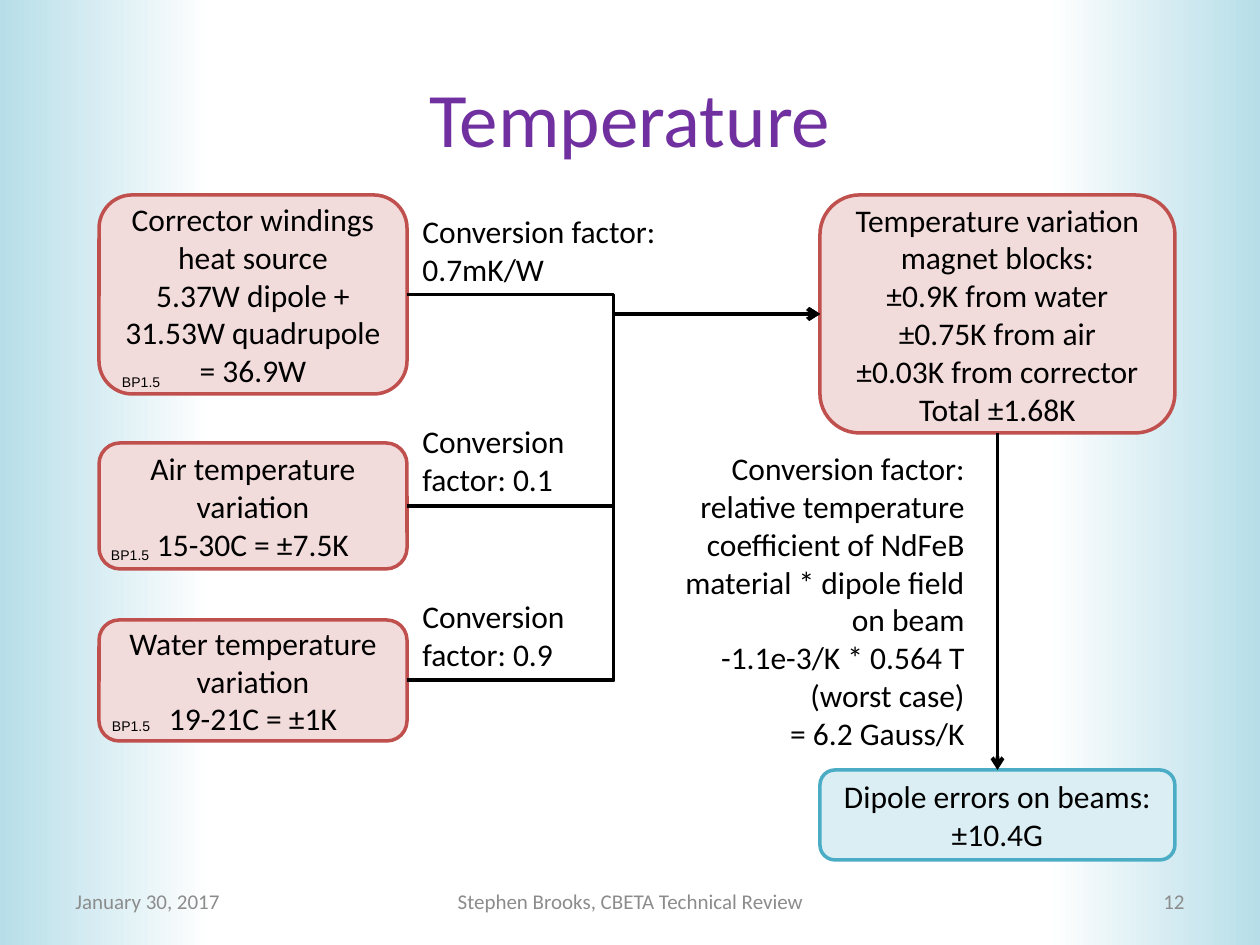
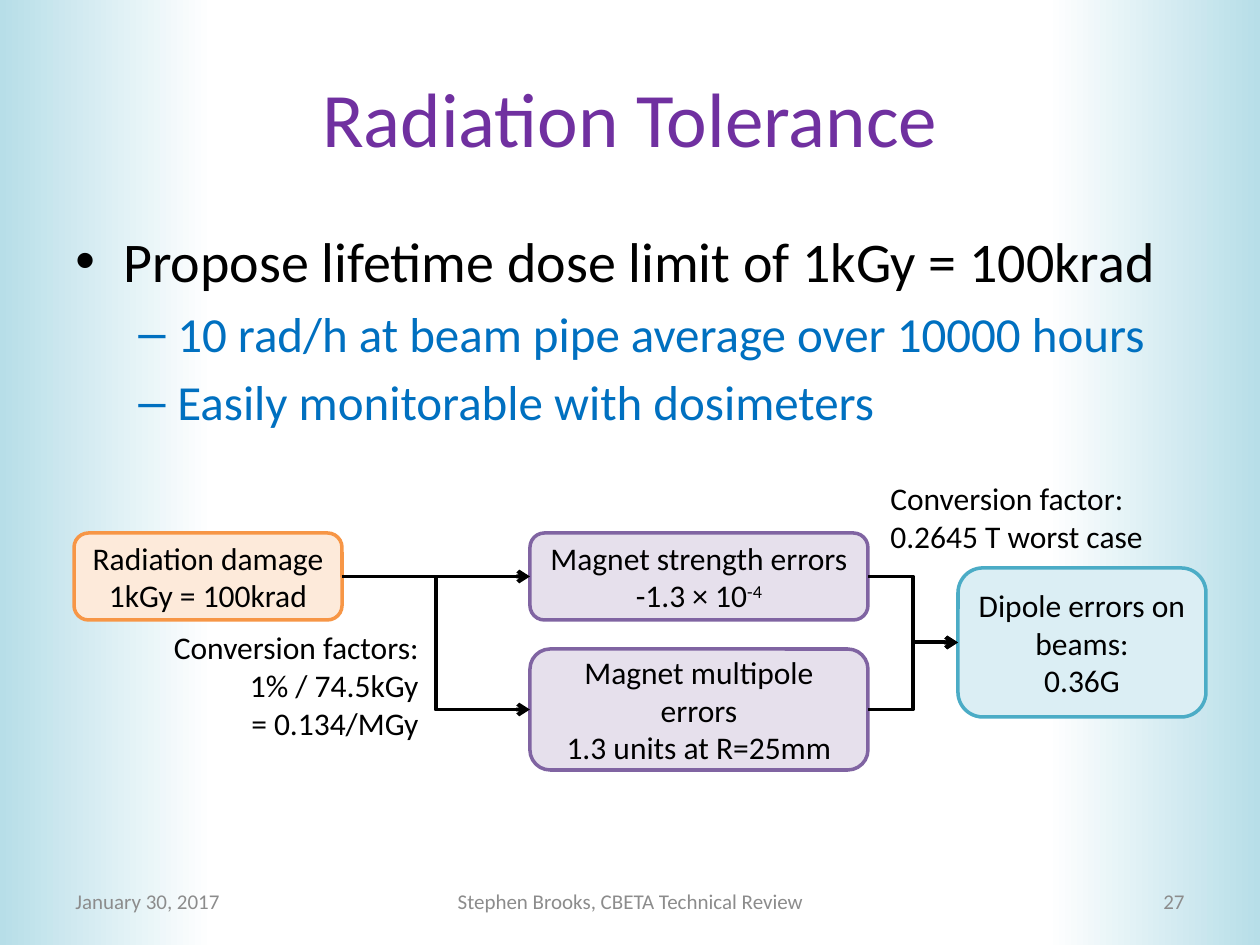
"""Builds two slides on magnet temperature and radiation tolerance."""
from lxml.etree import SubElement as sub
from pptx import Presentation
from pptx.dml.color import RGBColor as RGB
from pptx.enum.shapes import MSO_CONNECTOR as LINK, MSO_SHAPE as SHAPE
from pptx.enum.text import MSO_ANCHOR as ANCHOR, PP_ALIGN as ALIGN
from pptx.oxml.ns import qn
from pptx.util import Emu, Pt

WIDTH, HEIGHT = 1260, 945
SCALE = 914400 / 126
BLACK = RGB(0x00, 0x00, 0x00)
WHITE = RGB(0xFF, 0xFF, 0xFF)
GREY = RGB(0x8C, 0x8C, 0x8C)
PURPLE = RGB(0x70, 0x30, 0xA0)
BLUE = RGB(0x00, 0x70, 0xC0)
SKY = RGB(0xB7, 0xDE, 0xE8)
RED_BOX = RGB(0xF2, 0xDC, 0xDB), RGB(0xC0, 0x50, 0x4D)
TEAL_BOX = RGB(0xDB, 0xEE, 0xF4), RGB(0x4B, 0xAC, 0xC6)
PLUM_BOX = RGB(0xE6, 0xE0, 0xEC), RGB(0x80, 0x64, 0xA2)
GOLD_BOX = RGB(0xFD, 0xEA, 0xDA), RGB(0xF7, 0x96, 0x46)
TOP, LEFT, BOTTOM, RIGHT = range(4)


def px(*sizes):
    return [Emu(round(size * SCALE)) for size in sizes]


def write(frame, text, size=18, color=BLACK, font="Calibri", align=ALIGN.LEFT,
          anchor=ANCHOR.TOP, wrap=True, inset=None):
    """Fill a frame, one paragraph a line; text after ^ is raised."""
    frame.word_wrap = wrap
    frame.vertical_anchor = anchor
    if inset is not None:
        frame.margin_left, frame.margin_top, frame.margin_right, frame.margin_bottom = px(*[inset] * 4)
    for i, line in enumerate(text.split("\n")):
        para = frame.add_paragraph() if i else frame.paragraphs[0]
        para.alignment = align
        for j, part in enumerate(line.split("^")):
            run = para.add_run()
            run.text = part
            run.font.size = Pt(size)
            run.font.name = font
            run.font.color.rgb = color
            if j:
                run._r.get_or_add_rPr().set("baseline", "30000")


class Deck:
    """Holds the shared style and the current slide."""

    def __init__(self):
        self.prs = Presentation()
        self.prs.slide_width, self.prs.slide_height = px(WIDTH, HEIGHT)

    def start(self, title, number):
        slide = self.prs.slides.add_slide(self.prs.slide_layouts[5])
        self.shapes = slide.shapes
        self.band(0, 0)
        self.band(WIDTH - 213, 180)
        head = self.shapes.title
        head.left, head.top, head.width, head.height = px(63, 38, 1134, 158)
        write(head.text_frame, title, size=44, color=PURPLE,
              align=ALIGN.CENTER, anchor=ANCHOR.MIDDLE)
        for text, x, w, align in (
                ("January 30, 2017", 63, 294, ALIGN.LEFT),
                ("Stephen Brooks, CBETA Technical Review", 431, 399, ALIGN.CENTER),
                (str(number), 903, 294, ALIGN.RIGHT)):
            self.note(text, x, 876, w, 50, size=12, color=GREY,
                      align=align, anchor=ANCHOR.MIDDLE)

    def band(self, x, turn):
        band = self.shapes.add_shape(SHAPE.RECTANGLE, *px(x, 0, 213, HEIGHT))
        band.shadow.inherit = False
        band.line.fill.background()
        band.rotation = turn
        band.fill.gradient()
        band.fill.gradient_angle = 0
        for stop, color, place in zip(band.fill.gradient_stops, (SKY, WHITE), (0, 1)):
            stop.color.rgb = color
            stop.position = place
        self.shapes._spTree.insert(2, band._element)

    def note(self, text, x, y, w, h, **style):
        note = self.shapes.add_textbox(*px(x, y, w, h))
        write(note.text_frame, text, **style)
        return note

    def tag(self, x, y):
        self.note("BP1.5", x, y, 49, 26, size=8, font="Arial", wrap=False, inset=5)

    def box(self, text, x, y, w, h, paint):
        box = self.shapes.add_shape(SHAPE.ROUNDED_RECTANGLE, *px(x, y, w, h))
        box.shadow.inherit = False
        box.fill.solid()
        box.fill.fore_color.rgb, box.line.color.rgb = paint
        box.line.width = Pt(2)
        write(box.text_frame, text, align=ALIGN.CENTER, anchor=ANCHOR.MIDDLE)
        return box

    def link(self, start, end, out=RIGHT, into=LEFT, kind=LINK.ELBOW):
        link = self.shapes.add_connector(kind, 0, 0, 0, 0)
        link.begin_connect(start, out)
        link.end_connect(end, into)
        link.line.color.rgb = BLACK
        link.line.width = Pt(2.25)
        sub(link.line._get_or_add_ln(), qn("a:tailEnd"), type="arrow")
        sub(link._element.spPr, qn("a:effectLst"))

    def points(self, rows, x, y, w, h):
        looks = (("•", 48, -48, 32, BLACK), ("–", 102, -39, 28, BLUE))
        frame = self.note("\n".join(text for _, text in rows), x, y, w, h).text_frame
        for para, (level, _) in zip(frame.paragraphs, rows):
            mark, margin, indent, size, color = looks[level]
            para.level = level
            para.space_before = Pt(size * 0.2)
            font = para.runs[0].font
            font.size = Pt(size)
            font.color.rgb = color
            props = para._p.get_or_add_pPr()
            for key, value in zip(("marL", "indent"), px(margin, indent)):
                props.set(key, str(value))
            sub(props, qn("a:buFont"), typeface="Arial")
            sub(props, qn("a:buChar"), char=mark)


def heat(deck):
    deck.start("Temperature", 12)
    beam = deck.box("Dipole errors on beams:\n±10.4G", 820, 770, 355, 90, TEAL_BOX)
    block = deck.box("Temperature variation magnet blocks:\n±0.9K from water\n"
                     "±0.75K from air\n±0.03K from corrector\nTotal ±1.68K",
                     820, 195, 355, 238, RED_BOX)
    for text, y, h in (
            ("Corrector windings heat source\n5.37W dipole + 31.53W quadrupole\n= 36.9W", 195, 199),
            ("Air temperature variation\n15-30C = ±7.5K", 443, 126),
            ("Water temperature variation\n19-21C = ±1K", 620, 121)):
        deck.link(deck.box(text, 99, y, 308, h, RED_BOX), block)
    deck.link(block, beam, BOTTOM, TOP, LINK.STRAIGHT)
    deck.note("Conversion factor:\nrelative temperature coefficient of NdFeB material * "
              "dipole field on beam\n-1.1e-3/K * 0.564 T (worst case)\n= 6.2 Gauss/K",
              669, 443, 308, 317, align=ALIGN.RIGHT)
    deck.note("Conversion factor:\n0.7mK/W", 410, 206, 308, 89)
    deck.note("Conversion factor: 0.1", 410, 416, 178, 89)
    deck.note("Conversion factor: 0.9", 410, 591, 178, 89)
    for spot in ((117, 369), (106, 542), (107, 713)):
        deck.tag(*spot)


def dose(deck):
    deck.start("Radiation Tolerance", 27)
    deck.points(((0, "Propose lifetime dose limit of 1kGy = 100krad"),
                 (1, "10 rad/h at beam pipe average over 10000 hours"),
                 (1, "Easily monitorable with dosimeters")), 63, 220, 1134, 232)
    harm = deck.box("Radiation damage\n1kGy = 100krad", 74, 533, 268, 87, GOLD_BOX)
    field = deck.box("Magnet strength errors\n-1.3 × 10^-4", 530, 533, 338, 87, PLUM_BOX)
    poles = deck.box("Magnet multipole errors\n1.3 units at R=25mm", 530, 649, 338, 121, PLUM_BOX)
    beam = deck.box("Dipole errors on beams:\n0.36G", 958, 568, 248, 149, TEAL_BOX)
    deck.link(harm, field, kind=LINK.STRAIGHT)
    deck.link(harm, poles)
    deck.link(field, beam)
    deck.link(poles, beam)
    deck.note("Conversion factors:\n1% / 74.5kGy\n= 0.134/MGy", 144, 622, 287, 127,
              align=ALIGN.RIGHT)
    deck.note("Conversion factor:\n0.2645 T worst case", 878, 473, 328, 89)


def main():
    deck = Deck()
    heat(deck)
    dose(deck)
    deck.prs.save("out.pptx")


if __name__ == "__main__":
    main()
